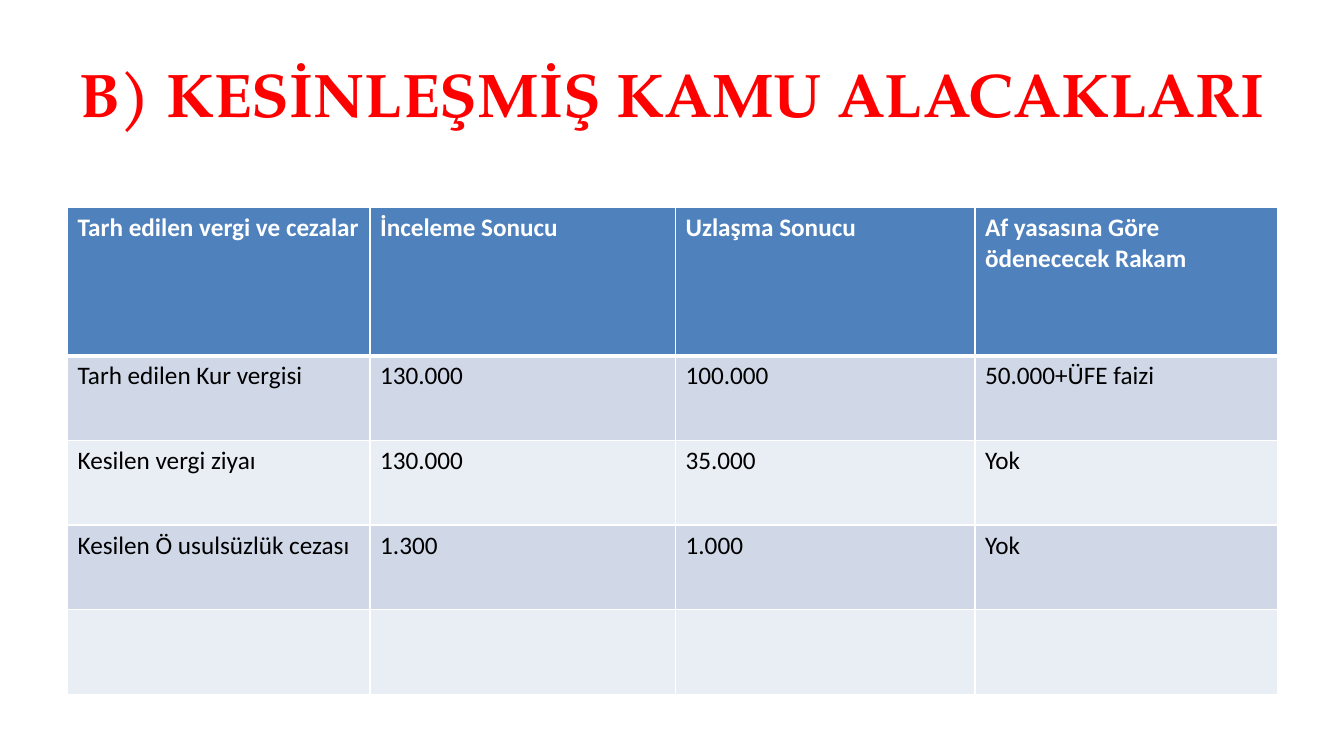
"""Build the slide on finalised public receivables."""
from lxml.etree import SubElement
from pptx import Presentation
from pptx.dml.color import RGBColor
from pptx.enum.text import MSO_ANCHOR, MSO_AUTO_SIZE, PP_ALIGN
from pptx.oxml import parse_xml
from pptx.oxml.ns import nsdecls, qn
from pptx.util import Inches, Pt

RED = RGBColor(0xFF, 0x00, 0x00)
WHITE = RGBColor(0xFF, 0xFF, 0xFF)
BLACK = RGBColor(0x00, 0x00, 0x00)
HEADER_BLUE = RGBColor(0x4F, 0x81, 0xBD)
BAND_DARK = RGBColor(0xD0, 0xD8, 0xE8)
BAND_LIGHT = RGBColor(0xE9, 0xED, 0xF4)

COLUMN_WIDTHS = [3, 3.03, 2.97, 3]
ROW_HEIGHTS = [1.47] + [0.84] * 4
ROWS = [
    ["Tarh edilen vergi ve cezalar", "İnceleme Sonucu", "Uzlaşma Sonucu",
     "Af yasasına Göre ödenececek Rakam"],
    ["Tarh edilen Kur vergisi", "130.000", "100.000", "50.000+ÜFE faizi"],
    ["Kesilen vergi ziyaı", "130.000", "35.000", "Yok"],
    ["Kesilen Ö usulsüzlük cezası", "1.300", "1.000", "Yok"],
    [""] * 4,
]


class SlideBuilder:
    """Holds the fonts and the current page, and adds elements to it."""

    def __init__(self, page, title_font, body_font):
        self.page = page
        self.title_font = title_font
        self.body_font = body_font

    def add_span(self, para, text, font, size, color, bold):
        span = para.add_run()
        span.text = text
        span.font.name = font
        span.font.size = Pt(size)
        span.font.bold = bold
        span.font.color.rgb = color

    def add_title(self, text, left, top, width, height):
        box = self.page.shapes.title
        box.left, box.top = Inches(left), Inches(top)
        box.width, box.height = Inches(width), Inches(height)
        frame = box.text_frame
        frame.auto_size = MSO_AUTO_SIZE.NONE
        frame.word_wrap = True
        frame.vertical_anchor = MSO_ANCHOR.MIDDLE
        para = frame.paragraphs[0]
        para.alignment = PP_ALIGN.CENTER
        self.add_span(para, text, self.title_font, 44, RED, True)

    def set_borders(self, cell, top, bottom):
        properties = cell._tc.get_or_add_tcPr()
        widths = {"lnL": 1, "lnR": 1, "lnT": top, "lnB": bottom}
        for position, (side, points) in enumerate(widths.items()):
            line = parse_xml(f'<a:{side} {nsdecls("a")} w="{Pt(points)}"/>')
            fill = SubElement(line, qn("a:solidFill"))
            SubElement(fill, qn("a:srgbClr"), val=str(WHITE))
            properties.insert(position, line)

    def add_table(self, rows, left, top, widths, heights):
        table = self.page.shapes.add_table(
            len(rows), len(widths), Inches(left), Inches(top),
            Inches(sum(widths)), Inches(sum(heights))).table
        for column, width in zip(table.columns, widths):
            column.width = Inches(width)
        for index, (texts, height) in enumerate(zip(rows, heights)):
            table.rows[index].height = Inches(height)
            header = index == 0
            band = BAND_DARK if index % 2 else BAND_LIGHT
            for cell, text in zip(table.rows[index].cells, texts):
                cell.fill.solid()
                cell.fill.fore_color.rgb = HEADER_BLUE if header else band
                self.set_borders(cell, 3 if index == 1 else 1, 3 if header else 1)
                if text:
                    self.add_span(cell.text_frame.paragraphs[0], text, self.body_font,
                                  18, WHITE if header else BLACK, header)


def main():
    deck = Presentation()
    deck.slide_width, deck.slide_height = Inches(13.33), Inches(7.5)
    page = deck.slides.add_slide(deck.slide_layouts.get_by_name("Title Only"))
    builder = SlideBuilder(page, "TeX Gyre Pagella", "Calibri")
    builder.add_title("B) KESİNLEŞMİŞ KAMU ALACAKLARI", 0.67, 0.3, 12, 1.25)
    builder.add_table(ROWS, 0.67, 2.06, COLUMN_WIDTHS, ROW_HEIGHTS)
    deck.save("out.pptx")


if __name__ == "__main__":
    main()
